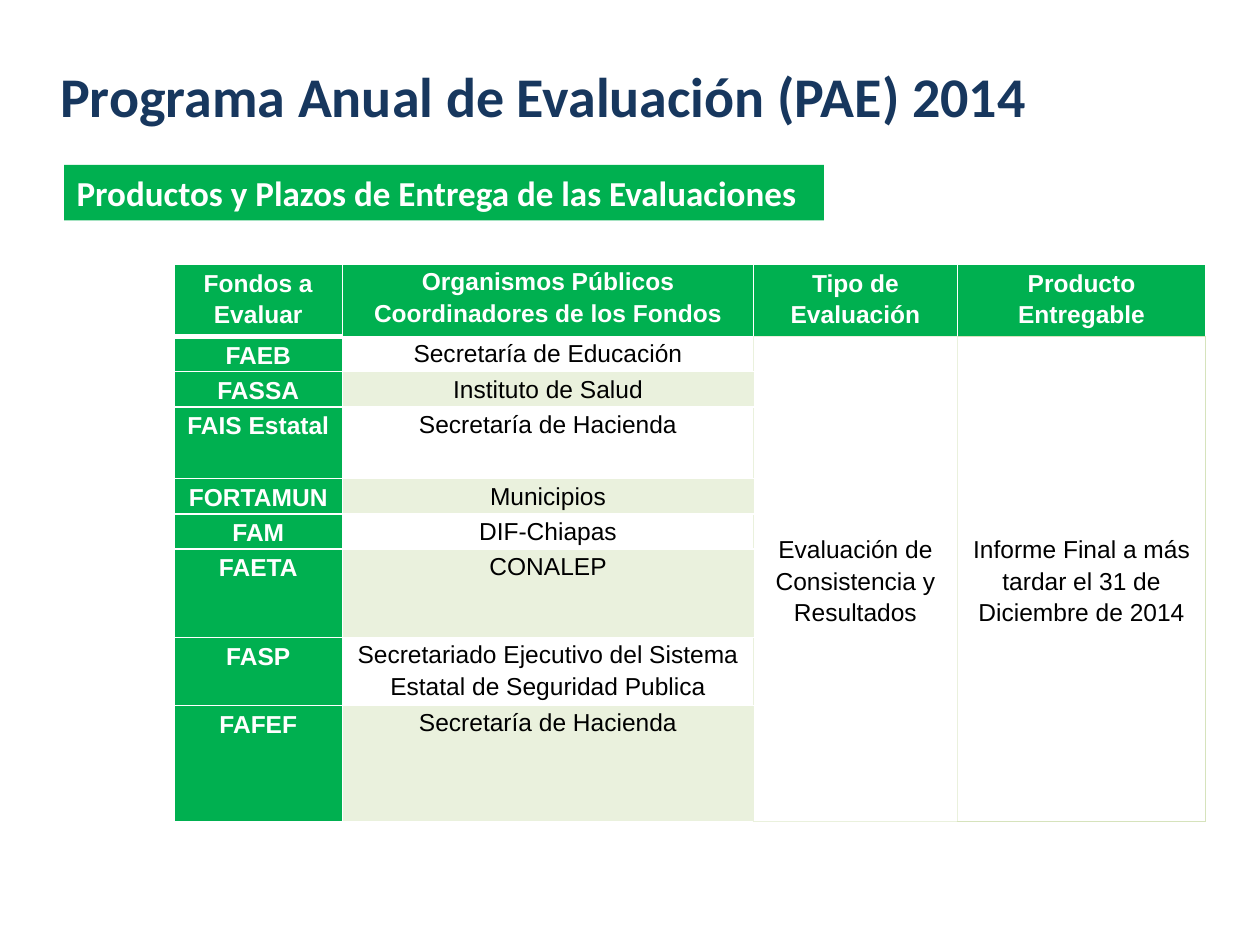
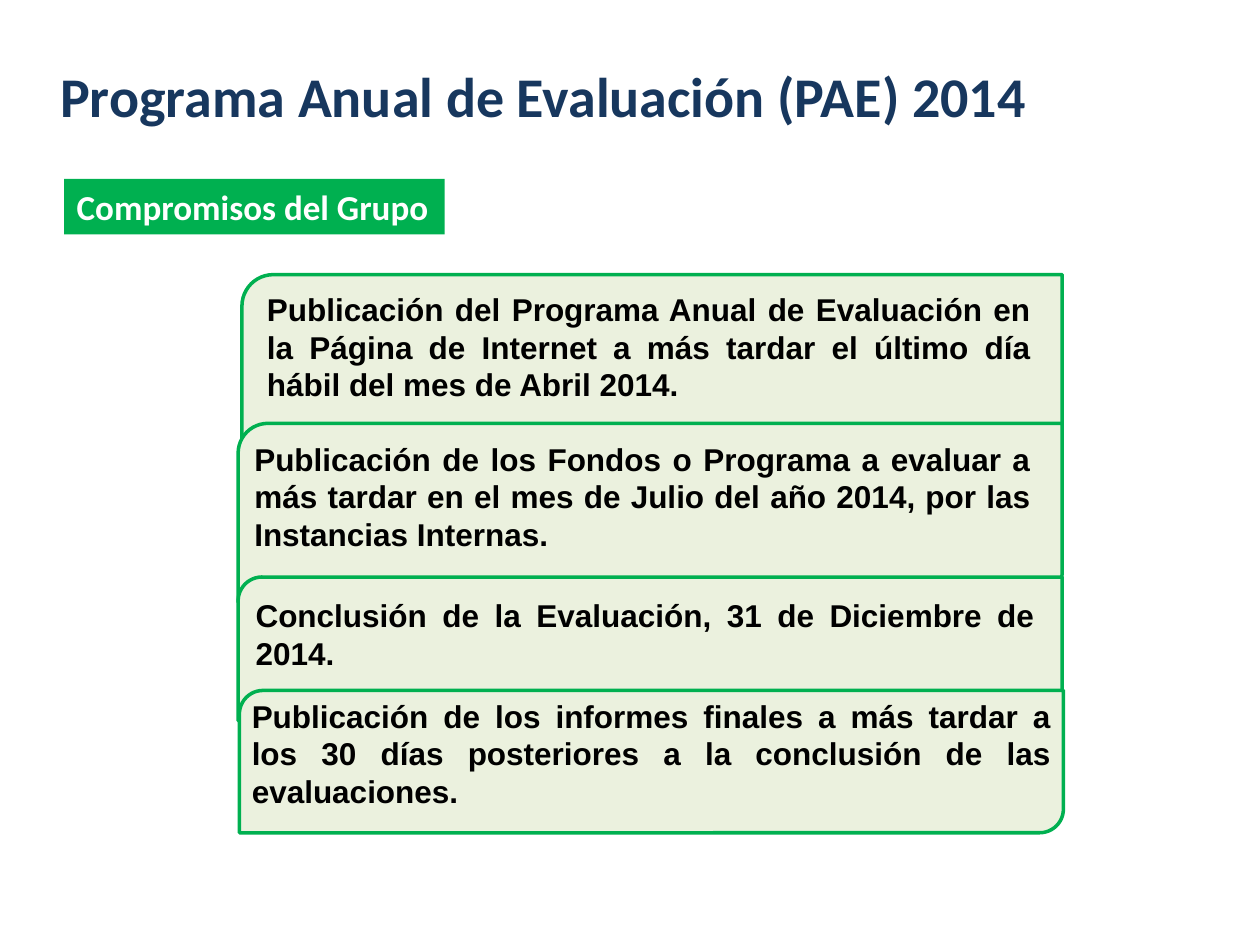
from lxml.etree import SubElement
from pptx import Presentation
from pptx.dml.color import RGBColor
from pptx.enum.shapes import MSO_SHAPE
from pptx.enum.text import MSO_ANCHOR, MSO_AUTO_SIZE, PP_ALIGN
from pptx.oxml import parse_xml
from pptx.oxml.ns import nsdecls, qn
from pptx.util import Inches, Pt

GREEN, NAVY, WHITE, BLACK = "00B050", "17375E", "FFFFFF", "000000"
PALE, EDGE, CARD = "EAF1DD", "D6E3BC", "EBF1DE"
TITLE = "Programa Anual de Evaluación (PAE) 2014"

# Fund, coordinating body, row height
FUNDS = [
    ("FAEB", "Secretaría de Educación", 0.28),
    ("FASSA", "Instituto de Salud", 0.28),
    ("FAIS Estatal", "Secretaría de Hacienda", 0.57),
    ("FORTAMUN", "Municipios", 0.28),
    ("FAM", "DIF-Chiapas", 0.28),
    ("FAETA", "CONALEP", 0.7),
    ("FASP", "Secretariado Ejecutivo del Sistema Estatal de Seguridad Publica", 0.54),
    ("FAFEF", "Secretaría de Hacienda", 0.92),
]
HEADINGS = ["Fondos a Evaluar", "Organismos Públicos Coordinadores de los Fondos",
            "Tipo de Evaluación", "Producto Entregable"]
HEADING_HEIGHT = 0.57
COLUMN_WIDTHS = [1.34, 3.26, 1.62, 1.97]
SHARED_RESULTS = ["Evaluación de Consistencia y Resultados",
                  "Informe Final a más tardar el 31 de Diciembre de 2014"]

# Commitment, card box, text box
COMMITMENTS = [
    ("Publicación del Programa Anual de Evaluación en la Página de Internet "
     "a más tardar el último día hábil del mes de Abril 2014.",
     (1.92, 2.18, 6.51, 1.49), (2.02, 2.25, 6.26, 1.01)),
    ("Publicación de los Fondos o Programa a evaluar a más tardar en el mes de "
     "Julio del año 2014, por las Instancias Internas.",
     (1.89, 3.36, 6.54, 1.42), (1.92, 3.44, 6.36, 1.01)),
    ("Conclusión de la Evaluación, 31 de Diciembre de 2014.",
     (1.89, 4.58, 6.54, 1.14), (1.93, 4.68, 6.38, 0.71)),
    ("Publicación de los informes finales a más tardar a los 30 días posteriores "
     "a la conclusión de las evaluaciones.",
     (1.9, 5.48, 6.54, 1.13), (1.9, 5.48, 6.54, 1.01)),
]


def color(value):
    return RGBColor.from_string(value)


def inches(box):
    return [Inches(length) for length in box]


def write(frame, text, size, font, ink, bold=True, align=PP_ALIGN.LEFT):
    frame.word_wrap = True
    frame.text = text
    paragraph = frame.paragraphs[0]
    paragraph.alignment = align
    paragraph.font.size = Pt(size)
    paragraph.font.name = font
    paragraph.font.bold = bold
    paragraph.font.color.rgb = color(ink)
    return paragraph


def add_panel(slide, preset, box, fill, line=None):
    panel = slide.shapes.add_shape(preset, *inches(box))
    panel.shadow.inherit = False
    panel.fill.solid()
    panel.fill.fore_color.rgb = color(fill)
    if line:
        panel.line.color.rgb = color(line)
        panel.line.width = Pt(2)
    else:
        panel.line.fill.background()
    return panel


# Shared frame: shadowed title and green section band
def add_section_slide(deck, section, band_box):
    slide = deck.slides.add_slide(deck.slide_layouts[5])
    title = slide.shapes.title
    title.left, title.top, title.width, title.height = inches((-0.12, 0.44, 8.87, 0.63))
    frame = title.text_frame
    heading = write(frame, TITLE, 32, "Calibri", NAVY, align=PP_ALIGN.CENTER)
    frame.auto_size = MSO_AUTO_SIZE.NONE
    frame.vertical_anchor = MSO_ANCHOR.MIDDLE
    heading.runs[0].font._element.append(parse_xml(
        f'<a:effectLst {nsdecls("a")}><a:outerShdw blurRad="38100" dist="38100" '
        'dir="2700000" algn="tl"><a:srgbClr val="000000"><a:alpha val="43000"/>'
        '</a:srgbClr></a:outerShdw></a:effectLst>'))

    band = add_panel(slide, MSO_SHAPE.RECTANGLE, band_box, GREEN)
    write(band.text_frame, section, 20, "Calibri", WHITE)
    band.text_frame.vertical_anchor = MSO_ANCHOR.TOP
    return slide


# Table cells
def cell_borders(row, column):
    borders = {side: (WHITE, 1) for side in "LRTB"}
    if column == 0 and row < 2:
        borders["B" if row == 0 else "T"] = (WHITE, 3)
    elif column == 1 and row:
        borders["R"] = (PALE, 1)
    elif column > 1:
        tint = PALE if column == 2 else EDGE
        for side in "LRTB" if row else "B":
            borders[side] = (tint, 1)
        if row:
            borders["L"] = (PALE, 1)
    return borders


def style_cell(cell, row, column):
    properties = cell._tc.get_or_add_tcPr()
    for side, (ink, width) in cell_borders(row, column).items():
        edge = SubElement(properties, qn(f"a:ln{side}"), w=str(Pt(width)))
        SubElement(SubElement(edge, qn("a:solidFill")), qn("a:srgbClr"), val=ink)
    if row == 0 or column == 0:
        fill = GREEN
    else:
        fill = PALE if column == 1 and row % 2 == 0 else WHITE
    cell.fill.solid()
    cell.fill.fore_color.rgb = color(fill)
    cell.margin_left = cell.margin_right = Inches(0 if column == 1 else 0.07)
    cell.margin_top = Inches(0 if column == 1 else 0.01)
    cell.margin_bottom = 0


def write_cell(cell, text, header):
    paragraph = write(cell.text_frame, text, 14, "Arial", WHITE if header else BLACK,
                      bold=header, align=PP_ALIGN.CENTER)
    paragraph.line_spacing = 1.15


def add_funds_table(slide, left, top):
    heights = [HEADING_HEIGHT] + [height for _, _, height in FUNDS]
    box = (left, top, sum(COLUMN_WIDTHS), sum(heights))
    table = slide.shapes.add_table(len(heights), len(COLUMN_WIDTHS), *inches(box)).table
    table.first_row = table.horz_banding = False
    for column, width in zip(table.columns, COLUMN_WIDTHS):
        column.width = Inches(width)
    for row, height in zip(table.rows, heights):
        row.height = Inches(height)
    for row in range(len(heights)):
        for column in range(len(COLUMN_WIDTHS)):
            style_cell(table.cell(row, column), row, column)

    for column, heading in enumerate(HEADINGS):
        write_cell(table.cell(0, column), heading, True)
    for row, (fund, body, _) in enumerate(FUNDS, 1):
        write_cell(table.cell(row, 0), fund, True)
        write_cell(table.cell(row, 1), body, False)
    # Results that apply to every fund
    for column, result in enumerate(SHARED_RESULTS, 2):
        shared = table.cell(1, column)
        shared.merge(table.cell(len(FUNDS), column))
        write_cell(shared, result, False)
        shared.vertical_anchor = MSO_ANCHOR.MIDDLE


# Overlapping commitment cards
def add_commitment(slide, commitment, card_box, text_box):
    add_panel(slide, MSO_SHAPE.ROUND_2_DIAG_RECTANGLE, card_box, CARD, GREEN)
    statement = slide.shapes.add_textbox(*inches(text_box))
    write(statement.text_frame, commitment, 18, "Arial", BLACK, align=PP_ALIGN.JUSTIFY)


def main():
    deck = Presentation()
    deck.slide_width, deck.slide_height = Inches(10), Inches(7.5)

    deadlines = add_section_slide(
        deck, "Productos y Plazos de Entrega de las Evaluaciones", (0.51, 1.31, 6.03, 0.44))
    add_funds_table(deadlines, 1.38, 2.1)

    commitments = add_section_slide(deck, "Compromisos del Grupo", (0.51, 1.42, 3.02, 0.44))
    for commitment in COMMITMENTS:
        add_commitment(commitments, *commitment)

    deck.save("out.pptx")


if __name__ == "__main__":
    main()
